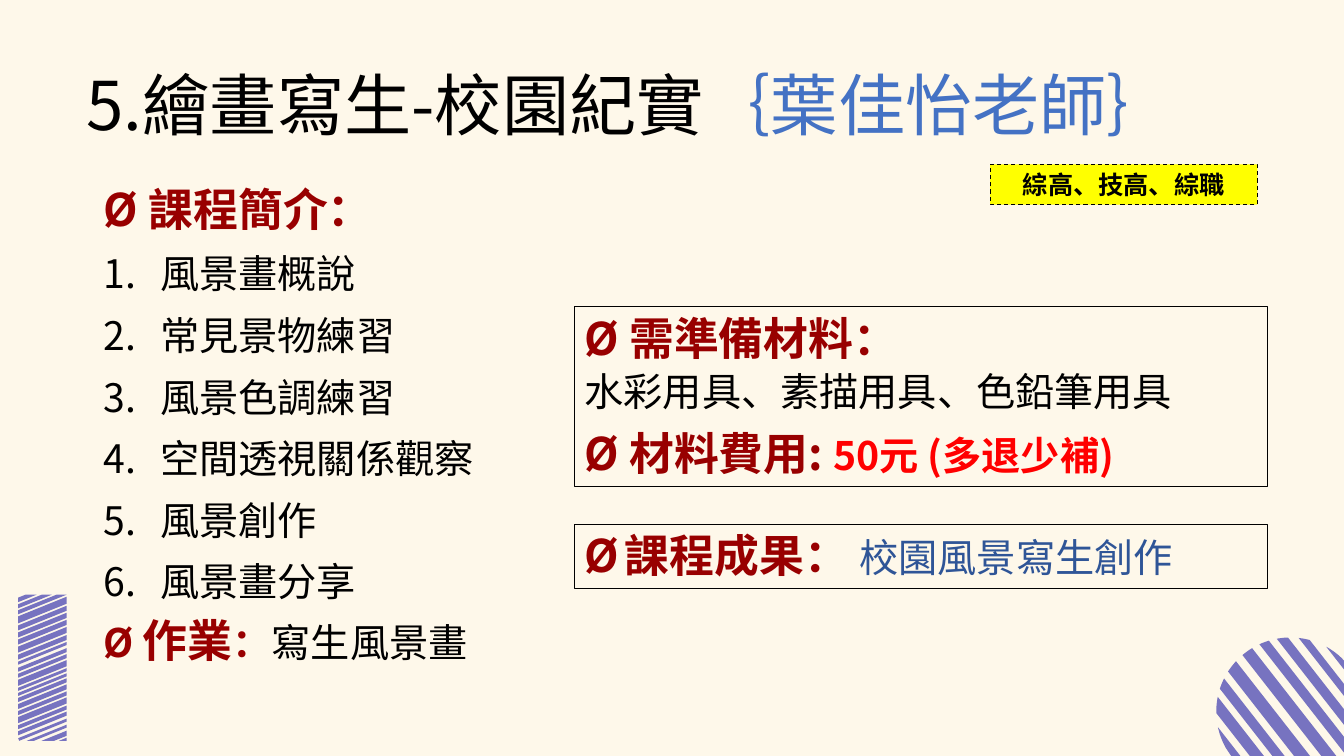
import math
from lxml import etree
from pptx import Presentation
from pptx import util as u
from pptx.dml.color import RGBColor
from pptx.enum import dml, shapes, text
from pptx.oxml.ns import qn

FONT = "Noto Sans CJK SC"
COLORS = {"paper": "FEF8EA", "purple": "7773C0", "ink": "000000", "teacher": "4472C4",
          "heading": "980000", "badge": "FFFF00", "result": "2F5597", "price": "FF0000"}
WIDTH, HEIGHT = u.Inches(13.33), u.Inches(7.5)
TOPICS = ["風景畫概說", "常見景物練習", "風景色調練習", "空間透視關係觀察", "風景創作", "風景畫分享"]
DISC_STRIPES = [(-1, -.9), (-.8, -.65), (-.56, -.43), (-.33, -.16), (-.04, .12),
                (.23, .36), (.46, .59), (.7, .8), (.92, 1)]
BAR_STRIPES = [(-11.4, -8.3), (-6.9, -4.1), (-2.8, 0), (1.4, 6.2), (7.6, 11), (12.4, 15.9),
               (17.2, 20.7), (22.1, 26.2), (27.6, 31), (32.4, 34.5), (36.6, 39.3),
               (40.7, 43.4), (44.8, 49), (50.3, 52.4), (53.8, 55.9), (57.2, 60),
               (61.4, 64.8), (66.2, 69), (70.3, 74.5), (75.9, 78.6), (80, 82.8),
               (84.8, 86.9), (89, 91), (93.1, 96.6), (97.9, 100)]
BAR_SLANT = 13.4


def share(left, top, width, height):
    """Turn percentages of the slide into a box in EMU."""
    return (round(left * WIDTH / 100), round(top * HEIGHT / 100),
            round(width * WIDTH / 100), round(height * HEIGHT / 100))


def color(name):
    """Look up a named colour."""
    return RGBColor.from_string(COLORS[name])


def add_runs(paragraph, runs):
    """Add (text, size, colour, bold) runs; a line feed becomes a line break."""
    for words, size, name, bold in runs:
        if words == "\n":
            paragraph.add_line_break()
            continue
        run = paragraph.add_run()
        run.text = words
        run.font.size = u.Pt(size)
        run.font.bold = bold
        run.font.name = FONT
        run.font.color.rgb = color(name)
        east_asian = etree.SubElement(run.font._element, qn("a:ea"))
        east_asian.set("typeface", FONT)


def set_frame(frame, anchor, vertical_inset):
    """Set wrapping, anchor and insets of a text frame."""
    frame.word_wrap = True
    frame.auto_size = text.MSO_AUTO_SIZE.NONE
    frame.vertical_anchor = anchor
    frame.margin_left = frame.margin_right = u.Inches(.1)
    frame.margin_top = frame.margin_bottom = u.Inches(vertical_inset)


def set_bullet(paragraph, numbered):
    """Number a paragraph with a hanging indent, or clear its bullet."""
    properties = paragraph._p.get_or_add_pPr()
    indent = u.Inches(.56) if numbered else 0
    properties.set("marL", str(indent))
    properties.set("indent", str(-indent))
    if numbered:
        etree.SubElement(properties, qn("a:buFont")).set("typeface", FONT)
        etree.SubElement(properties, qn("a:buAutoNum")).set("type", "arabicPeriod")
    else:
        etree.SubElement(properties, qn("a:buNone"))


def place(shape, box):
    """Move a placeholder into a box."""
    shape.left, shape.top, shape.width, shape.height = box


def add_stripes(slide, contours):
    """Draw closed contours as one purple freeform."""
    builder = slide.shapes.build_freeform(*contours[0][0])
    for index, contour in enumerate(contours):
        if index:
            builder.move_to(*contour[0])
        builder.add_line_segments(contour[1:], close=True)
    shape = builder.convert_to_shape()
    shape.shadow.inherit = False
    shape.fill.solid()
    shape.fill.fore_color.rgb = color("purple")
    shape.line.fill.background()


def add_disc(slide, box):
    """Draw a disc of diagonal stripes filling a box."""
    left, top, width, height = box
    radius, angle, steps = width / 2, math.radians(52), 8
    along = math.cos(angle), math.sin(angle)

    def point(offset, side):
        """Find where a stripe edge meets the rim."""
        reach = side * math.sqrt(max(0, 1 - offset ** 2))
        return (left + radius * (1 + offset * along[1] + reach * along[0]),
                top + radius * (1 - offset * along[0] + reach * along[1]))

    contours = []
    for low, high in DISC_STRIPES:
        offsets = [low + (high - low) * step / steps for step in range(steps + 1)]
        contours.append([point(offset, 1) for offset in offsets]
                        + [point(offset, -1) for offset in reversed(offsets)])
    add_stripes(slide, contours)


def add_bar(slide, box):
    """Draw a bar of slanted stripes clipped to a box."""
    left, top, width, height = box

    def edge(start):
        """Clip one stripe edge to the top and bottom of the bar."""
        ends = max(start, 0), min(start + BAR_SLANT, 100)
        return [(left + width * (1 - (end - start) / BAR_SLANT), top + height * end / 100)
                for end in ends]

    add_stripes(slide, [edge(low) + edge(high)[::-1] for low, high in BAR_STRIPES])


def add_title(slide, box):
    """Fill the title with the course and its teacher."""
    title = slide.shapes.title
    place(title, box)
    set_frame(title.text_frame, text.MSO_ANCHOR.MIDDLE, .1)
    paragraph = title.text_frame.paragraphs[0]
    paragraph.alignment = text.PP_ALIGN.LEFT
    paragraph.line_spacing = .9
    add_runs(paragraph, [("5.繪畫寫生-校園紀實", 48, "ink", False),
                         ("｛葉佳怡老師｝", 48, "teacher", False)])


def add_outline(slide, box):
    """Fill the body with the course topics and homework."""
    body = slide.placeholders[1]
    place(body, box)
    frame = body.text_frame
    set_frame(frame, text.MSO_ANCHOR.TOP, .1)
    lines = [[("Ø 課程簡介：", 32, "heading", True)]]
    lines += [[(topic, 28, "ink", False)] for topic in TOPICS]
    lines += [[("Ø ", 28, "heading", True), ("作業", 32, "heading", True),
               ("：", 28, "heading", True), ("寫生風景畫", 28, "ink", False)]]
    for index, runs in enumerate(lines):
        paragraph = frame.add_paragraph() if index else frame.paragraphs[0]
        paragraph.line_spacing = u.Pt(34)
        paragraph.space_before = u.Pt(10 if index else 2)
        set_bullet(paragraph, 0 < index <= len(TOPICS))
        add_runs(paragraph, runs)


def add_panel(slide, box, lines, alignment, spacing, fill=None):
    """Draw an outlined rectangle holding lines of runs."""
    panel = slide.shapes.add_shape(shapes.MSO_SHAPE.RECTANGLE, *box)
    panel.shadow.inherit = False
    panel.line.color.rgb = color("ink")
    panel.line.width = u.Pt(.75)
    if fill:
        panel.fill.solid()
        panel.fill.fore_color.rgb = color(fill)
        panel.line.dash_style = dml.MSO_LINE.DASH
    else:
        panel.fill.background()
    frame = panel.text_frame
    set_frame(frame, text.MSO_ANCHOR.MIDDLE, .05)
    for index, runs in enumerate(lines):
        paragraph = frame.add_paragraph() if index else frame.paragraphs[0]
        paragraph.alignment = alignment
        paragraph.line_spacing = spacing
        paragraph.space_before = u.Pt(10 if index else 0)
        add_runs(paragraph, runs)


def main():
    """Build the course slide."""
    presentation = Presentation()
    presentation.slide_width, presentation.slide_height = WIDTH, HEIGHT
    slide = presentation.slides.add_slide(presentation.slide_layouts[1])
    slide.background.fill.solid()
    slide.background.fill.fore_color.rgb = color("paper")
    add_disc(slide, share(90.5, 84.33, 11.03, 19.6))
    add_bar(slide, share(1.35, 78.67, 3.6, 19.33))
    add_title(slide, share(5.7, 8.13, 91.9, 12.53))
    add_outline(slide, share(6.98, 23.47, 34.28, 64.53))
    left = text.PP_ALIGN.LEFT
    add_panel(slide, share(73.67, 21.73, 19.88, 5.33),
              [[("綜高、技高、綜職", 18, "ink", True)]], text.PP_ALIGN.CENTER, 1, "badge")
    add_panel(slide, share(42.76, 69.33, 51.54, 8.53),
              [[("Ø", 32, "heading", True), (" ", 18, "heading", True),
                ("課程成果： ", 32, "heading", True),
                ("校園風景寫生創作", 28, "result", False)]], left, u.Pt(36))
    add_panel(slide, share(42.76, 40.53, 51.54, 23.87),
              [[("Ø 需準備材料：", 32, "heading", True), ("\n", 0, "ink", False),
                ("水彩用具、素描用具、色鉛筆用具", 28, "ink", False)],
               [("Ø 材料費用: ", 32, "heading", True),
                ("50元 (多退少補)", 28, "price", True)]], left, u.Pt(36))


    presentation.save("out.pptx")


if __name__ == "__main__":
    main()
